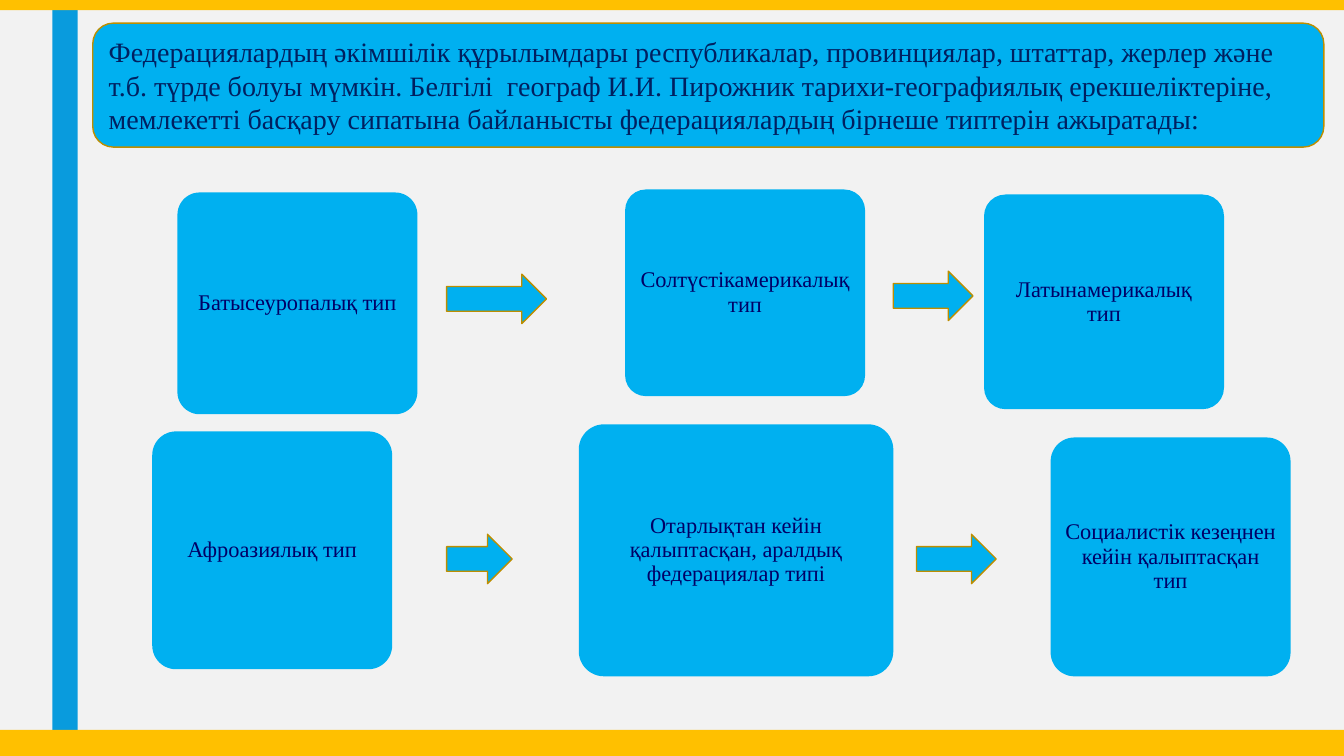
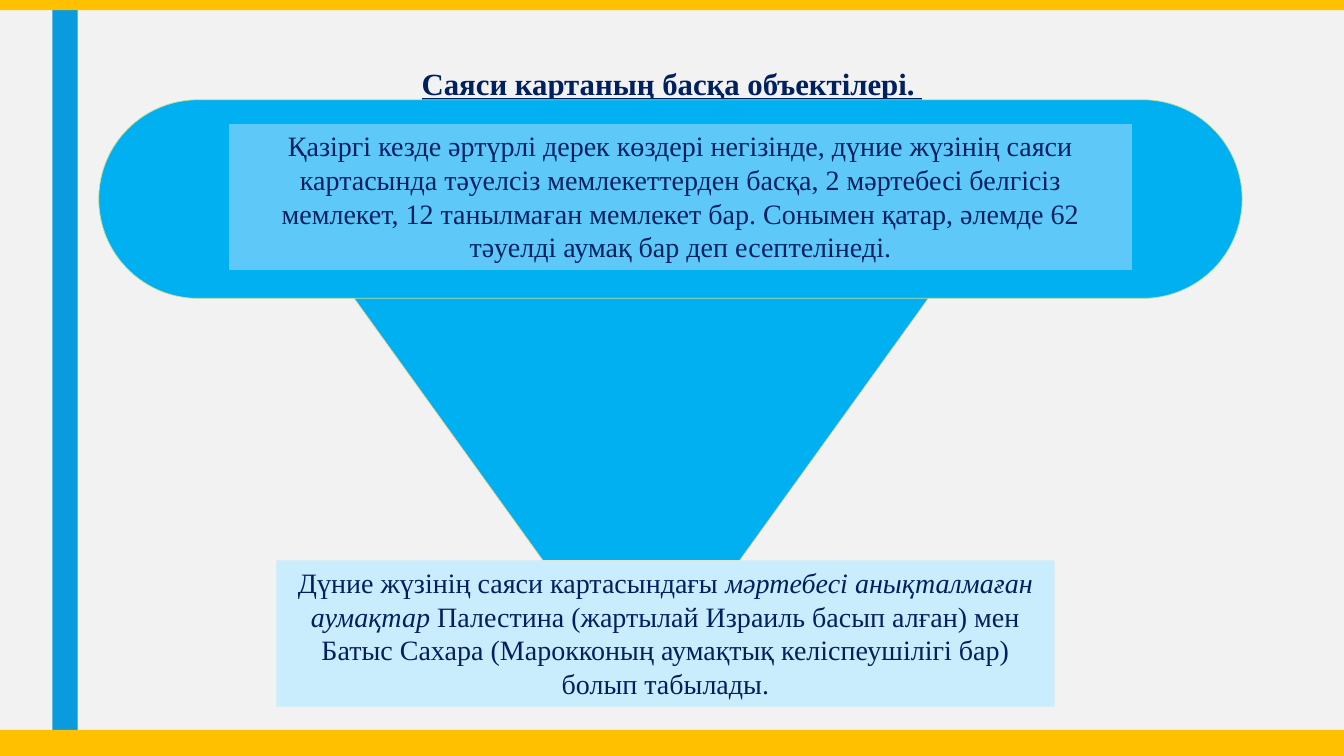
from dataclasses import dataclass

from pptx import Presentation
from pptx.dml.color import RGBColor
from pptx.enum.shapes import MSO_SHAPE
from pptx.enum.text import MSO_ANCHOR, MSO_AUTO_SIZE, PP_ALIGN
from pptx.util import Inches, Pt

TITLE_ONLY, BLANK = 5, 6


@dataclass(frozen=True)
class Theme:
    font: str = "Times New Roman"
    background: str = "F2F2F2"
    band: str = "FFC000"
    stripe: str = "099BDD"
    main: str = "00B0F0"
    light: str = "5EC8F8"
    pale: str = "C9EDFD"
    outline: str = "BD8E00"
    funnel_line: str = "FFD597"
    pill_line: str = "C6DF99"
    text: str = "002060"
    card_text: str = "000066"
    title_size: int = 22
    body_size: int = 20
    card_size: int = 16


class Deck:
    """Holds the theme, the presentation and the slide being built."""

    def __init__(self, theme):
        self.theme = theme
        self.prs = Presentation()
        self.prs.slide_width = Inches(13.33)
        self.prs.slide_height = Inches(7.5)
        self.slide = None

    def new_slide(self, layout):
        t = self.theme
        self.slide = self.prs.slides.add_slide(self.prs.slide_layouts[layout])
        fill = self.slide.background.fill
        fill.solid()
        fill.fore_color.rgb = RGBColor.from_string(t.background)
        self.shape(MSO_SHAPE.RECTANGLE, (0.52, 0, 0.25, 7.5), t.stripe)
        self.shape(MSO_SHAPE.RECTANGLE, (0, 7.24, 13.33, 0.26), t.band)
        self.shape(MSO_SHAPE.RECTANGLE, (0, 0, 13.33, 0.1), t.band)

    def shape(self, kind, box, fill, line=None, width=1, adj=None):
        sp = self.slide.shapes.add_shape(kind, *map(Inches, box))
        sp.shadow.inherit = False
        sp.fill.solid()
        sp.fill.fore_color.rgb = RGBColor.from_string(fill)
        if line:
            sp.line.color.rgb = RGBColor.from_string(line)
            sp.line.width = Pt(width)
        else:
            sp.line.fill.background()
        if adj is not None:
            sp.adjustments[0] = adj
        return sp

    def style(self, p, size, color, align=PP_ALIGN.CENTER):
        p.alignment = align
        for r in p.runs:
            r.font.name = self.theme.font
            r.font.size = Pt(size)
            r.font.color.rgb = RGBColor.from_string(color)

    def title(self, text):
        sp = self.slide.shapes.title
        sp.left, sp.top, sp.width, sp.height = map(Inches, (0, 0.55, 13.33, 0.55))
        tf = sp.text_frame
        tf.text = text
        tf.auto_size = MSO_AUTO_SIZE.NONE
        tf.vertical_anchor = MSO_ANCHOR.MIDDLE
        p = tf.paragraphs[0]
        self.style(p, self.theme.title_size, self.theme.text)
        p.runs[0].font.bold = True
        p.runs[0].font.underline = True

    def header(self, box, text):
        t = self.theme
        sp = self.shape(MSO_SHAPE.ROUNDED_RECTANGLE, box, t.main, t.outline)
        sp.text_frame.text = text
        self.style(sp.text_frame.paragraphs[0], t.body_size, t.text, PP_ALIGN.LEFT)

    def card(self, box, text):
        t = self.theme
        sp = self.shape(MSO_SHAPE.ROUNDED_RECTANGLE, box, t.main, adj=0.1)
        tf = sp.text_frame
        tf.margin_left = tf.margin_right = Inches(0.07)
        tf.margin_top = tf.margin_bottom = Inches(0.07)
        tf.text = text
        p = tf.paragraphs[0]
        p.line_spacing = 0.9
        self.style(p, t.card_size, t.card_text)

    def arrow(self, left, top, width):
        self.shape(MSO_SHAPE.RIGHT_ARROW, (left, top, width, 0.49),
                   self.theme.main, self.theme.outline)

    def caption(self, box, fill, parts, line=None):
        """Add a filled text box; parts are (text, italic) pairs."""
        sp = self.shape(MSO_SHAPE.RECTANGLE, box, fill, line, 0.75)
        tf = sp.text_frame
        tf.vertical_anchor = MSO_ANCHOR.TOP
        tf.auto_size = MSO_AUTO_SIZE.SHAPE_TO_FIT_TEXT
        p = tf.paragraphs[0]
        for text, italic in parts:
            r = p.add_run()
            r.text = text
            r.font.italic = italic
        self.style(p, self.theme.body_size, self.theme.text)


def federation_types(deck):
    deck.new_slide(BLANK)
    deck.header(
        (0.92, 0.23, 12.21, 1.23),
        "Федерациялардың әкімшілік құрылымдары республикалар, провинциялар, "
        "штаттар, жерлер және т.б. түрде болуы мүмкін. Белгілі  географ "
        "И.И. Пирожник тарихи-географиялық ерекшеліктеріне, мемлекетті басқару "
        "сипатына байланысты федерациялардың бірнеше типтерін ажыратады:")
    cards = [
        ((1.76, 1.91, 2.38, 2.2), "Батысеуропалық тип"),
        ((6.2, 1.88, 2.38, 2.05), "Солтүстікамерикалық тип"),
        ((9.76, 1.93, 2.38, 2.13), "Латынамерикалық тип"),
        ((1.51, 4.28, 2.38, 2.36), "Афроазиялық тип"),
        ((5.74, 4.21, 3.12, 2.5),
         "Отарлықтан кейін қалыптасқан, аралдық федерациялар типі"),
        ((10.42, 4.34, 2.38, 2.37), "Социалистік кезеңнен кейін қалыптасқан тип"),
    ]
    for box, text in cards:
        deck.card(box, text)
    arrows = [(4.43, 2.72, 0.99), (8.86, 2.69, 0.79),
              (4.43, 5.3, 0.65), (9.09, 5.3, 0.79)]
    for left, top, width in arrows:
        deck.arrow(left, top, width)


def other_map_objects(deck):
    t = deck.theme
    deck.new_slide(TITLE_ONLY)
    deck.title("Саяси картаның басқа объектілері. ")
    funnel = deck.shape(MSO_SHAPE.TRAPEZOID, (3.26, 2.61, 6.2, 2.95),
                        t.main, t.funnel_line, 0.5, adj=0.72)
    funnel.rotation = 180
    deck.shape(MSO_SHAPE.ROUNDED_RECTANGLE, (0.98, 0.99, 11.34, 1.97),
               t.main, t.pill_line, 0.5, adj=0.5)
    deck.caption(
        (2.27, 1.23, 8.96, 1.45), t.light,
        [("Қазіргі кезде әртүрлі дерек көздері негізінде, дүние жүзінің саяси "
          "картасында тәуелсіз мемлекеттерден басқа, 2 мәртебесі белгісіз "
          "мемлекет, 12 танылмаған мемлекет бар. Сонымен қатар, әлемде 62 "
          "тәуелді аумақ бар деп есептелінеді.", False)],
        line=t.main)
    deck.caption(
        (2.74, 5.56, 7.72, 1.45), t.pale,
        [("Дүние жүзінің саяси картасындағы ", False),
         ("мәртебесі анықталмаған аумақтар", True),
         (" Палестина (жартылай Израиль басып алған) мен Батыс Сахара "
          "(Марокконың аумақтық келіспеушілігі бар) болып табылады.", False)])


def main():
    deck = Deck(Theme())
    federation_types(deck)
    other_map_objects(deck)
    deck.prs.save("out.pptx")


if __name__ == "__main__":
    main()
